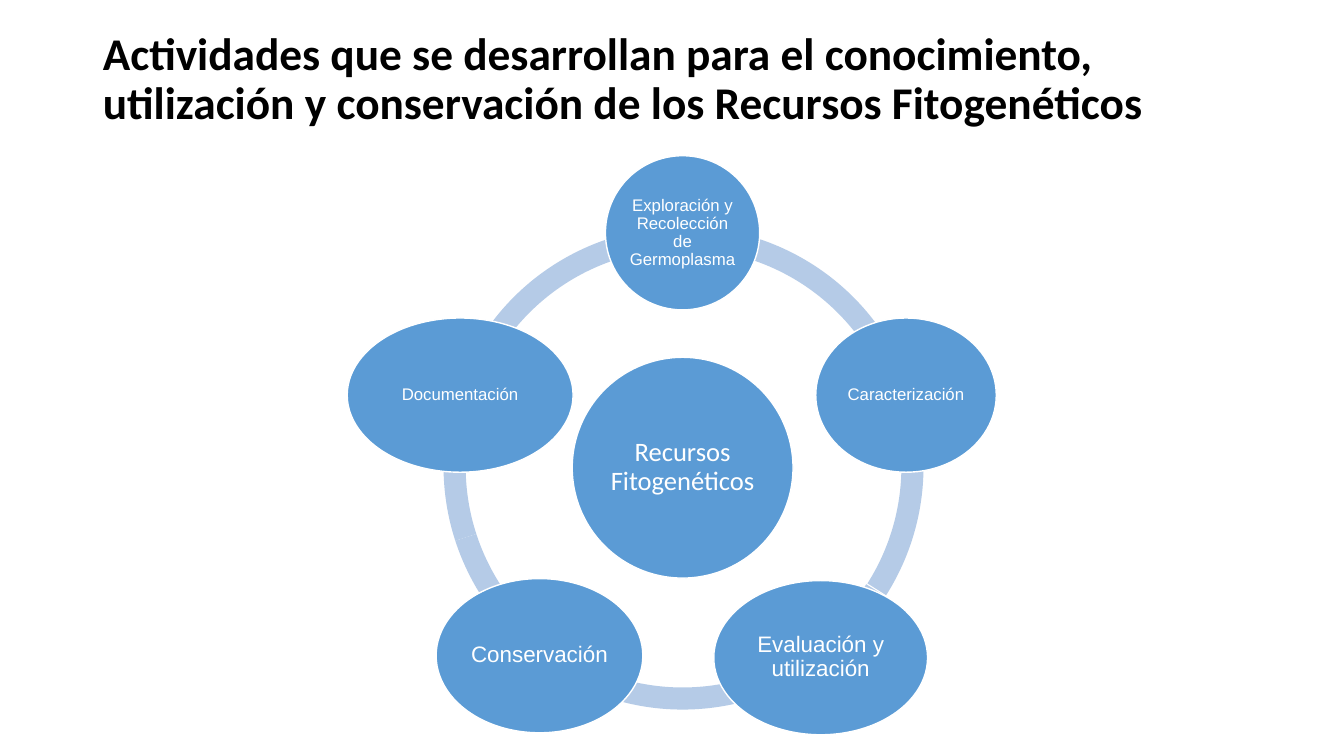
from math import cos, radians, sin

from pptx import Presentation
from pptx.dml.color import RGBColor
from pptx.enum.shapes import MSO_SHAPE
from pptx.enum.text import MSO_ANCHOR, MSO_AUTO_SIZE, PP_ALIGN
from pptx.util import Inches, Pt

TITLE = ("Actividades que se desarrollan para el conocimiento, "
         "utilización y conservación de los Recursos Fitogenéticos")
HUB = ("Recursos Fitogenéticos", 2.19, 19)
ACTIVITIES = [
    ("Exploración y Recolección de Germoplasma", 1.53, 12, 0, 0),
    ("Caracterización", 1.79, 12, 0, 0),
    ("Evaluación y utilización", 2.12, 16, 0, 0),
    ("Conservación", 2.05, 16, -0.05, -0.02),
    ("Documentación", 2.24, 12, 0.01, 0),
]
ARCS = [
    (118.8, 162, 0.01, -0.01),
    (76.56, 119.17, 0, 0.02),
    (32.04, 76.33, -0.01, 0.01),
    (205.2, 32.4, 0.01, -0.01),
    (162, 205.2, 0.01, -0.01),
]
CENTER_X, CENTER_Y = 6.77, 4.64
ORBIT = 2.33
ARC_SIZE = 4.76
NODE_HEIGHT = 1.53
BLUE, PALE_BLUE, WHITE, BLACK = "5B9BD5", "B5CBE7", "FFFFFF", "000000"


def color(value):
    return RGBColor.from_string(value)


def write(frame, text, size, font, ink, bold=False):
    frame.word_wrap = True
    frame.auto_size = MSO_AUTO_SIZE.NONE
    frame.vertical_anchor = MSO_ANCHOR.MIDDLE
    para = frame.paragraphs[0]
    para.line_spacing = 0.9
    span = para.add_run()
    span.text = text
    span.font.size = Pt(size)
    span.font.name = font
    span.font.bold = bold
    span.font.color.rgb = color(ink)
    return para


def add_centered(page, kind, x, y, width, height, fill):
    shape = page.shapes.add_shape(kind, Inches(x - width / 2), Inches(y - height / 2),
                                  Inches(width), Inches(height))
    shape.shadow.inherit = False
    shape.fill.solid()
    shape.fill.fore_color.rgb = color(fill)
    return shape


def add_arc(page, start, end, shift_x, shift_y):
    arc = add_centered(page, MSO_SHAPE.BLOCK_ARC, CENTER_X + shift_x, CENTER_Y + shift_y,
                       ARC_SIZE, ARC_SIZE, PALE_BLUE)
    arc.line.fill.background()
    arc.adjustments[0] = start * 0.6
    arc.adjustments[1] = end * 0.6
    arc.adjustments[2] = 0.046


def add_node(page, text, x, y, width, height, size, font):
    node = add_centered(page, MSO_SHAPE.OVAL, x, y, width, height, BLUE)
    node.line.color.rgb = color(WHITE)
    node.line.width = Pt(1)
    frame = node.text_frame
    frame.margin_left = frame.margin_right = 0
    frame.margin_top = frame.margin_bottom = Inches(0.02)
    write(frame, text, size, font, WHITE).alignment = PP_ALIGN.CENTER


def main():
    deck = Presentation()
    deck.slide_width, deck.slide_height = Inches(13.33), Inches(7.5)
    page = deck.slides.add_slide(deck.slide_layouts[5])

    title = page.shapes.title
    title.left, title.top = Inches(0.92), Inches(0.4)
    title.width, title.height = Inches(11.5), Inches(1.45)
    title.text_frame.margin_top = 0
    title.text_frame.margin_bottom = Inches(0.65)
    write(title.text_frame, TITLE, 32.4, "Calibri", BLACK, True).alignment = PP_ALIGN.LEFT

    for arc in ARCS:
        add_arc(page, *arc)

    text, diameter, size = HUB
    add_node(page, text, CENTER_X, CENTER_Y, diameter, diameter, size, "Calibri")

    for index, (text, width, size, shift_x, shift_y) in enumerate(ACTIVITIES):
        angle = radians(index * 360 / len(ACTIVITIES) - 90)
        add_node(page, text, CENTER_X + ORBIT * cos(angle) + shift_x,
                 CENTER_Y + ORBIT * sin(angle) + shift_y, width, NODE_HEIGHT, size, "Arial")

    deck.save("out.pptx")


if __name__ == "__main__":
    main()
